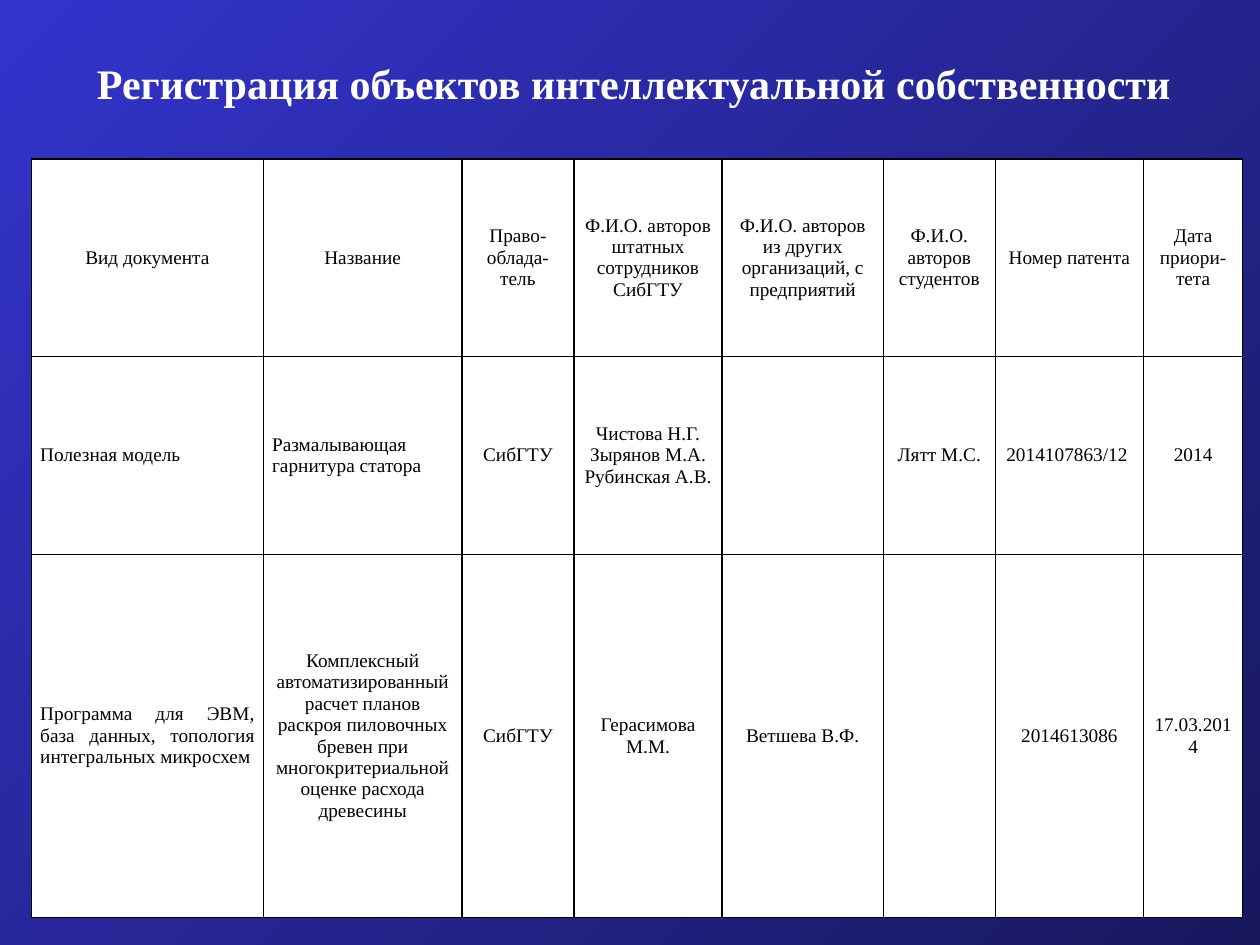
from dataclasses import dataclass

from lxml import etree
from pptx import Presentation
from pptx.dml.color import RGBColor
from pptx.enum.text import MSO_ANCHOR, PP_ALIGN
from pptx.oxml.ns import qn
from pptx.util import Pt

CENTER, JUSTIFY = PP_ALIGN.CENTER, PP_ALIGN.JUSTIFY
MIDDLE = MSO_ANCHOR.MIDDLE
COLORS = {
    "gradient start": "3333CC",
    "gradient end": "18185E",
    "title": "FFFFFF",
    "cell": "FFFFFF",
    "text": "000000",
    "border": "000000",
}
FONT = "Times New Roman"
TITLE_FORMAT = {"name": FONT, "size": Pt(24), "bold": True}
CELL_FORMAT = {"name": FONT, "size": Pt(11), "bold": False}
CELL_LAYOUT = {
    "margin_left": Pt(5),
    "margin_right": Pt(5),
    "margin_top": Pt(0),
    "margin_bottom": Pt(0),
    "vertical_anchor": MIDDLE,
}
COLUMN_WIDTHS = (132.5, 113.5, 64, 84.7, 92.1, 64, 84.7, 56.7)


@dataclass(frozen=True)
class Entry:
    height: float
    texts: tuple[str, ...]
    justified: tuple[int, ...] = ()


ENTRIES = (
    Entry(113, (
        "Вид документа",
        "Название",
        "Право-облада-тель",
        "Ф.И.О. авторов штатных сотрудников СибГТУ",
        "Ф.И.О. авторов из других организаций, с предприятий",
        "Ф.И.О.\nавторов\nстудентов",
        "Номер патента",
        "Дата приори-тета",
    )),
    Entry(113, (
        "Полезная модель",
        "Размалывающая гарнитура статора",
        "СибГТУ",
        "Чистова Н.Г.\nЗырянов М.А.\nРубинская А.В.",
        "",
        "Лятт М.С.",
        "2014107863/12 ",
        "2014",
    ), justified=(0, 1)),
    Entry(207.4, (
        "Программа для ЭВМ, база данных, топология интегральных микросхем",
        "Комплексный автоматизированный расчет планов раскроя пиловочных "
        "бревен при многокритериальной оценке расхода древесины",
        "СибГТУ",
        "Герасимова М.М.",
        "Ветшева В.Ф.",
        "",
        "2014613086",
        "17.03.2014",
    ), justified=(0,)),
)


def color(name: str) -> RGBColor:
    return RGBColor.from_string(COLORS[name])


def apply(target, values: dict) -> None:
    for name, value in values.items():
        setattr(target, name, value)


def write(frame, text: str, font: dict, color_name: str, alignment) -> None:
    frame.text = text
    for para in frame.paragraphs:
        para.alignment = alignment
        apply(para.font, font)
        para.font.color.rgb = color(color_name)
        for span in para.runs:
            apply(span.font, font)
            span.font.color.rgb = color(color_name)


def draw_borders(cell) -> None:
    properties = cell._tc.get_or_add_tcPr()
    for index, side in enumerate(("lnL", "lnR", "lnT", "lnB")):
        line = etree.Element(qn(f"a:{side}"), w=str(Pt(1)))
        fill = etree.SubElement(line, qn("a:solidFill"))
        etree.SubElement(fill, qn("a:srgbClr"), val=COLORS["border"])
        properties.insert(index, line)


def paint_background(page) -> None:
    fill = page.background.fill
    fill.gradient()
    fill.gradient_angle = 315
    for stop, name in zip(fill.gradient_stops, ("gradient start", "gradient end")):
        stop.color.rgb = color(name)


def add_title(page) -> None:
    box = page.shapes.title
    apply(box, {"left": Pt(14.4), "top": Pt(27.4), "width": Pt(695.5), "height": Pt(39.6)})
    apply(box.text_frame, {"word_wrap": True, "vertical_anchor": MIDDLE})
    write(box.text_frame, "Регистрация объектов интеллектуальной собственности",
          TITLE_FORMAT, "title", CENTER)


def add_registry(page) -> None:
    height = sum(entry.height for entry in ENTRIES)
    table = page.shapes.add_table(
        len(ENTRIES), len(COLUMN_WIDTHS),
        Pt(18), Pt(90.8), Pt(sum(COLUMN_WIDTHS)), Pt(height),
    ).table
    apply(table, {"first_row": False, "horz_banding": False})
    for column, width in zip(table.columns, COLUMN_WIDTHS):
        column.width = Pt(width)
    for row, entry in zip(table.rows, ENTRIES):
        row.height = Pt(entry.height)
        for index, (cell, text) in enumerate(zip(row.cells, entry.texts)):
            apply(cell, CELL_LAYOUT)
            cell.fill.solid()
            cell.fill.fore_color.rgb = color("cell")
            alignment = JUSTIFY if index in entry.justified else CENTER
            write(cell.text_frame, text, CELL_FORMAT, "text", alignment)
            draw_borders(cell)


def main() -> None:
    deck = Presentation()
    apply(deck, {"slide_width": Pt(720), "slide_height": Pt(540)})
    page = deck.slides.add_slide(deck.slide_layouts.get_by_name("Title Only"))
    paint_background(page)
    add_title(page)
    add_registry(page)
    deck.save("out.pptx")


if __name__ == "__main__":
    main()
